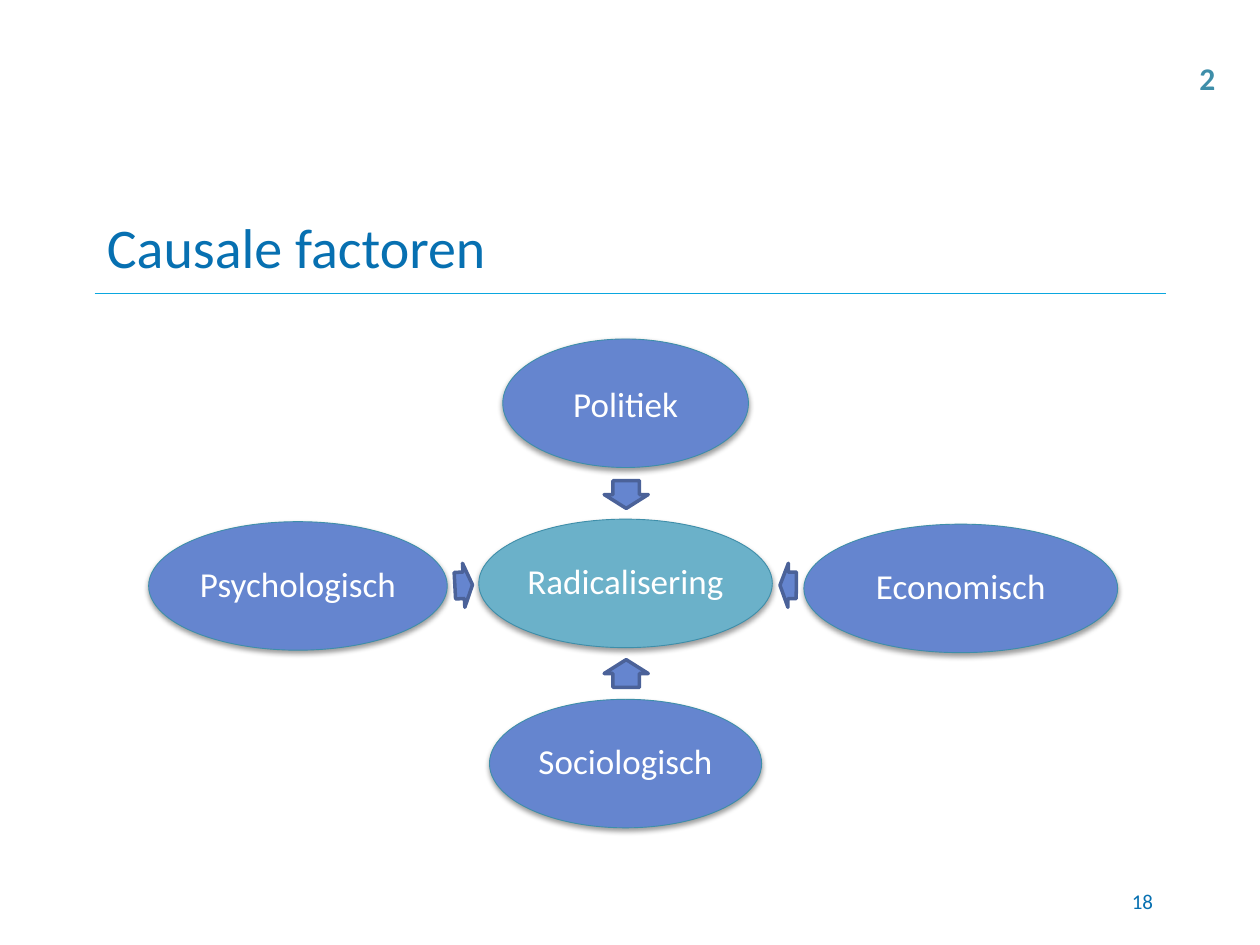
"""Build the slide on the causal factors of radicalisation."""
from lxml.etree import SubElement
from pptx import Presentation
from pptx.dml.color import RGBColor
from pptx.enum.shapes import MSO_CONNECTOR, MSO_SHAPE as SHAPE
from pptx.enum.text import MSO_ANCHOR as ANCHOR, MSO_AUTO_SIZE as AUTO, PP_ALIGN as ALIGN
from pptx.oxml.ns import qn
from pptx.util import Inches, Pt

BLUE = RGBColor(0x07, 0x70, 0xB1)
RULE = RGBColor(0x0B, 0xA7, 0xDF)
TEAL = RGBColor(0x6B, 0xB1, 0xC9)
EDGE = RGBColor(0x3E, 0x8E, 0xA9)
FACTOR = RGBColor(0x65, 0x85, 0xCF)
ARROW_EDGE = RGBColor(0x4B, 0x62, 0x99)
WHITE = RGBColor(0xFF, 0xFF, 0xFF)

prs = Presentation()
prs.slide_width, prs.slide_height = Inches(10), Inches(7.5)
COL, ROW = prs.slide_width / 100, prs.slide_height / 75
s = prs.slides.add_slide(prs.slide_layouts[6])


def box(x, y, w, h):
    return round(x * COL), round(y * ROW), round(w * COL), round(h * ROW)


def write(tf, text, size, color, align=ALIGN.LEFT, anchor=ANCHOR.MIDDLE):
    tf.text = text
    tf.word_wrap = True
    tf.vertical_anchor = anchor
    p = tf.paragraphs[0]
    p.alignment = align
    font = p.runs[0].font
    font.name, font.size, font.color.rgb = "Calibri", Pt(size), color
    return p


rule = s.shapes.add_connector(
    MSO_CONNECTOR.STRAIGHT, round(7.5 * COL), round(23.3 * ROW), round(92.5 * COL), round(23.3 * ROW))
rule.line.color.rgb, rule.line.width = RULE, Pt(0.75)
SubElement(rule._element.spPr, qn("a:effectLst"))

title = s.shapes.add_textbox(*box(7.5, 15.8, 85, 7.5))
write(title.text_frame, "Causale factoren", 32, BLUE)
page = s.shapes.add_textbox(*box(71.7, 69.5, 20.8, 4))
write(page.text_frame, "18", 12, BLUE, ALIGN.RIGHT)

MID_X, MID_Y, STEP, HEIGHT = 49.65, 46.3, 14.3, 10.2
ellipses = [
    ("Radicalisering", MID_X, MID_Y, 23.3, TEAL, 0.9),
    ("Politiek", MID_X, MID_Y - STEP, 19.5, FACTOR, 1.0),
    ("Economisch", 76.25, 46.7, 24.9, FACTOR, 0.9),
    ("Sociologisch", MID_X, MID_Y + STEP, 21.6, FACTOR, 0.9),
    ("Psychologisch", 23.65, 46.5, 23.7, FACTOR, 0.9),
]
for text, x, y, w, fill, spacing in ellipses:
    sp = s.shapes.add_shape(SHAPE.OVAL, *box(x - w / 2, y - HEIGHT / 2, w, HEIGHT))
    sp.fill.solid()
    sp.fill.fore_color.rgb = fill
    sp.line.color.rgb, sp.line.width = EDGE, Pt(0.5)
    effects = SubElement(sp._element.spPr, qn("a:effectLst"))
    shadow = SubElement(effects, qn("a:outerShdw"), blurRad=str(Pt(3.1)), dist=str(Pt(1.6)),
                        dir="5400000", rotWithShape="0")
    black = SubElement(shadow, qn("a:srgbClr"), val="000000")
    SubElement(black, qn("a:alpha"), val="38000")
    tf = sp.text_frame
    tf.margin_left = tf.margin_right = tf.margin_top = tf.margin_bottom = Inches(0.03)
    write(tf, text, 20, WHITE, ALIGN.CENTER).line_spacing = spacing

arrows = [
    (49.7, 39.25, 2.2, 90),
    (62.55, 46.45, 1.3, 180.7),
    (49.7, 53.45, 2.2, 270),
    (36.8, 46.45, 1.4, 356.9),
]
for x, y, length, angle in arrows:
    sp = s.shapes.add_shape(SHAPE.RIGHT_ARROW, *box(x - length / 2, y - 1.75, length, 3.5))
    sp.rotation = angle
    sp.adjustments[0], sp.adjustments[1] = 0.6, 0.5
    sp.fill.solid()
    sp.fill.fore_color.rgb = FACTOR
    sp.line.color.rgb, sp.line.width = ARROW_EDGE, Pt(2)
    sp.shadow.inherit = False

number = s.shapes.add_textbox(*box(94.2, 4.2, 3.3, 4))
tf = number.text_frame
write(tf, "2", 18, EDGE, anchor=ANCHOR.TOP).runs[0].font.bold = True
tf.word_wrap = False
tf.auto_size = AUTO.SHAPE_TO_FIT_TEXT

prs.save("out.pptx")
